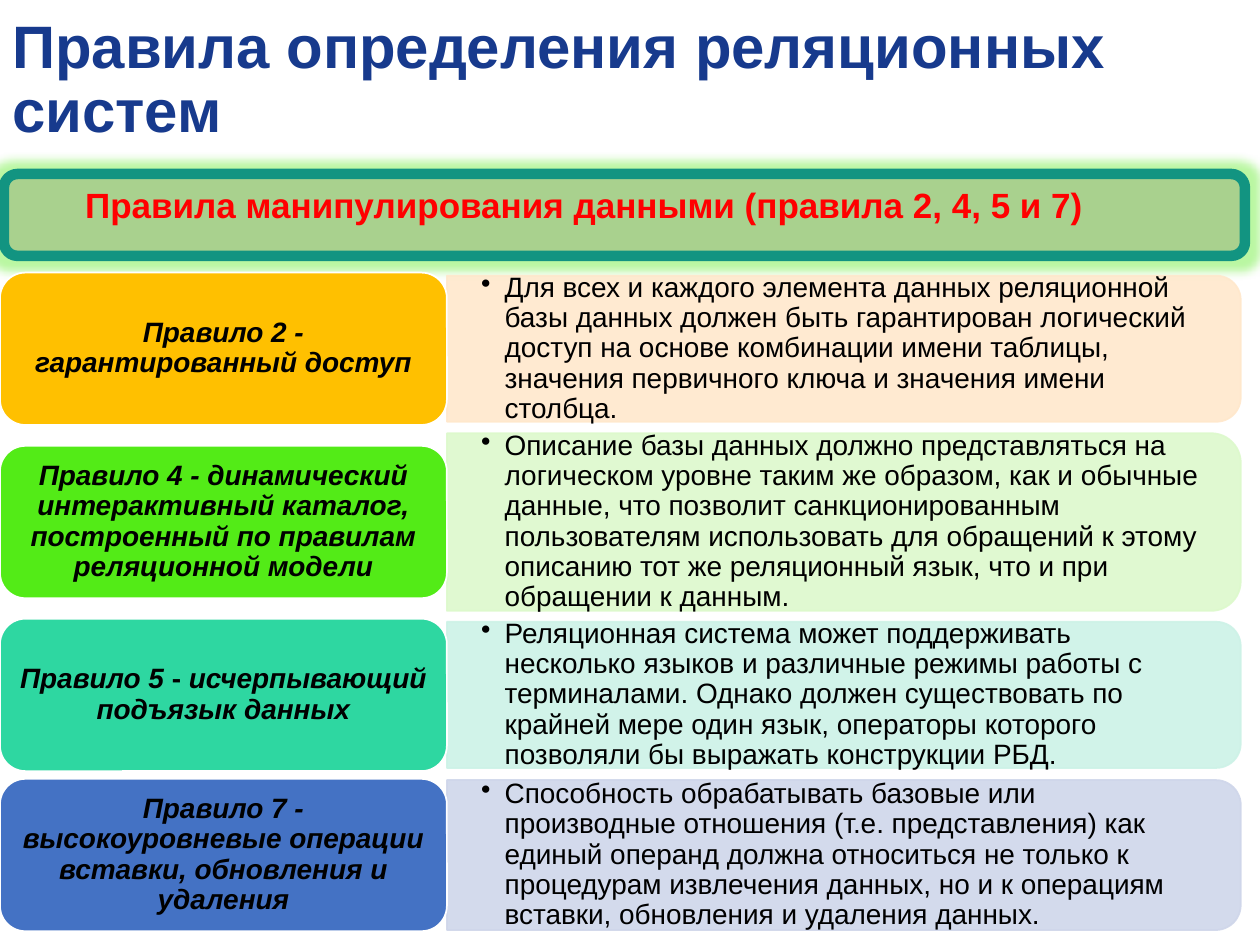
"""Build a slide on the data manipulation rules of relational systems."""
from lxml import etree
from pptx import Presentation
from pptx.dml.color import RGBColor
from pptx.enum.shapes import MSO_SHAPE
from pptx.enum.text import MSO_ANCHOR, PP_ALIGN
from pptx.oxml.ns import qn
from pptx.util import Pt

ROUNDED = MSO_SHAPE.ROUNDED_RECTANGLE
TOP_ROUNDED = MSO_SHAPE.ROUND_2_SAME_RECTANGLE
MIDDLE, TOP = MSO_ANCHOR.MIDDLE, MSO_ANCHOR.TOP
LEFT, CENTER, JUSTIFY = PP_ALIGN.LEFT, PP_ALIGN.CENTER, PP_ALIGN.JUSTIFY

BLACK = RGBColor(0x00, 0x00, 0x00)
WHITE = RGBColor(0xFF, 0xFF, 0xFF)
RED = RGBColor(0xFF, 0x00, 0x00)
NAVY = RGBColor(0x17, 0x3A, 0x8D)
SAGE = RGBColor(0xA9, 0xD1, 0x8E)
TEAL = RGBColor(0x12, 0x94, 0x81)
AMBER = RGBColor(0xFF, 0xC0, 0x00)
PALE_AMBER = RGBColor(0xFF, 0xE8, 0xCC)
GREEN = RGBColor(0x53, 0xEB, 0x17)
PALE_GREEN = RGBColor(0xDD, 0xF9, 0xCC)
MINT = RGBColor(0x2E, 0xD7, 0xA1)
PALE_MINT = RGBColor(0xCD, 0xF2, 0xE7)
BLUE = RGBColor(0x44, 0x72, 0xC4)
PALE_BLUE = RGBColor(0xCF, 0xD6, 0xEA)

LABEL_WIDTH, LABEL_HEIGHT = 255.4, 87.1
PANEL_WIDTH = 453.6

RULES = [
    (199.3, 83.5, AMBER, PALE_AMBER, ["Правило 2 - гарантированный доступ"],
     "Для всех и каждого элемента данных реляционной базы данных должен быть "
     "гарантирован логический доступ на основе комбинации имени таблицы, "
     "значения первичного ключа и значения имени столбца."),
    (298.3, 101.5, GREEN, PALE_GREEN,
     ["Правило 4 - динамический интерактивный каталог, "
      "построенный по правилам реляционной модели"],
     "Описание базы данных должно представляться на логическом уровне таким же "
     "образом, как и обычные данные, что позволит санкционированным "
     "пользователям использовать для обращений к этому описанию тот же "
     "реляционный язык, что и при обращении к данным."),
    (397.1, 83.5, MINT, PALE_MINT,
     ["Правило 5 ", "- ", "исчерпывающий подъязык данных"],
     "Реляционная система может поддерживать несколько языков и различные "
     "режимы работы с терминалами. Однако должен существовать по крайней мере "
     "один язык, операторы которого позволяли бы выражать конструкции РБД."),
    (488.6, 85.7, BLUE, PALE_BLUE,
     ["Правило 7 - высокоуровневые операции вставки, обновления и удаления"],
     "Способность обрабатывать базовые или производные отношения (т.е. "
     "представления) как единый операнд должна относиться не только к "
     "процедурам извлечения данных, но и к операциям вставки, обновления и "
     "удаления данных."),
]

presentation = Presentation()
presentation.slide_width, presentation.slide_height = Pt(720), Pt(540)
slide = presentation.slides.add_slide(presentation.slide_layouts[6])


def add_shape(kind, left, top, width, height, fill, line, line_width):
    shape = slide.shapes.add_shape(kind, Pt(left), Pt(top), Pt(width), Pt(height))
    shape.shadow.inherit = False
    shape.fill.solid()
    shape.fill.fore_color.rgb = fill
    shape.line.color.rgb = line
    shape.line.width = Pt(line_width)
    return shape


def write_text(shape, parts, size, color, align, anchor, inset, bold=False,
               italic=None, spacing=None, margin=0, indent=0, bullet=None):
    frame = shape.text_frame
    frame.word_wrap = True
    frame.vertical_anchor = anchor
    frame.margin_left = frame.margin_right = Pt(inset)
    frame.margin_top = frame.margin_bottom = Pt(inset / 2)
    paragraph = frame.paragraphs[0]
    paragraph.alignment = align
    paragraph.line_spacing = spacing
    properties = paragraph._p.get_or_add_pPr()
    properties.set("marL", str(Pt(margin)))
    properties.set("indent", str(Pt(indent)))
    if bullet:
        etree.SubElement(properties, qn("a:buChar"), char=bullet)
    paragraph.font.name = "Arial"
    paragraph.font.size = Pt(size)
    paragraph.font.bold = bold
    paragraph.font.italic = italic
    paragraph.font.color.rgb = color
    for part in parts:
        run = paragraph.add_run()
        run.text = part
        if part == "- ":
            run.font.italic = False


banner = add_shape(ROUNDED, 2.2, 99.4, 709.2, 46.8, SAGE, TEAL, 6)
effects = banner._element.spPr.find(qn("a:effectLst"))
glow = etree.SubElement(effects, qn("a:glow"), rad=str(Pt(11)))
glow_color = etree.SubElement(glow, qn("a:srgbClr"), val=str(GREEN))
etree.SubElement(glow_color, qn("a:alpha"), val="40000")

title = slide.shapes.add_textbox(Pt(0), Pt(7.9), Pt(720), Pt(77))
write_text(title, ["Правила определения реляционных систем"], 34.2, NAVY, LEFT,
           MIDDLE, 7.2, bold=True, spacing=0.9)

subtitle = slide.shapes.add_textbox(Pt(0), Pt(101.5), Pt(713.5), Pt(43.9))
write_text(subtitle, [" Правила манипулирования данными (правила 2, 4, 5 и 7)"],
           20, RED, JUSTIFY, TOP, 7.2, bold=True, indent=36)

for center, panel_height, color, pale_color, label_parts, description in RULES:
    panel_center = LABEL_WIDTH + PANEL_WIDTH / 2
    panel = add_shape(TOP_ROUNDED, panel_center - panel_height / 2,
                      center - PANEL_WIDTH / 2, panel_height, PANEL_WIDTH,
                      pale_color, pale_color, 1)
    panel.rotation = 90
    for panel_color in panel._element.spPr.iter(qn("a:srgbClr")):
        etree.SubElement(panel_color, qn("a:alpha"), val="90000")

    text_height = panel_height - 8
    text_box = slide.shapes.add_textbox(Pt(LABEL_WIDTH), Pt(center - text_height / 2),
                                        Pt(450), Pt(text_height))
    write_text(text_box, [description], 16, BLACK, LEFT, MIDDLE, 19.5,
               spacing=0.9, margin=13.5, indent=-13.5, bullet="•")

    label = add_shape(ROUNDED, 0, center - LABEL_HEIGHT / 2, LABEL_WIDTH,
                      LABEL_HEIGHT, color, WHITE, 1)
    write_text(label, label_parts, 16, BLACK, CENTER, MIDDLE, 5,
               bold=True, italic=True, spacing=0.9)

presentation.save("out.pptx")
